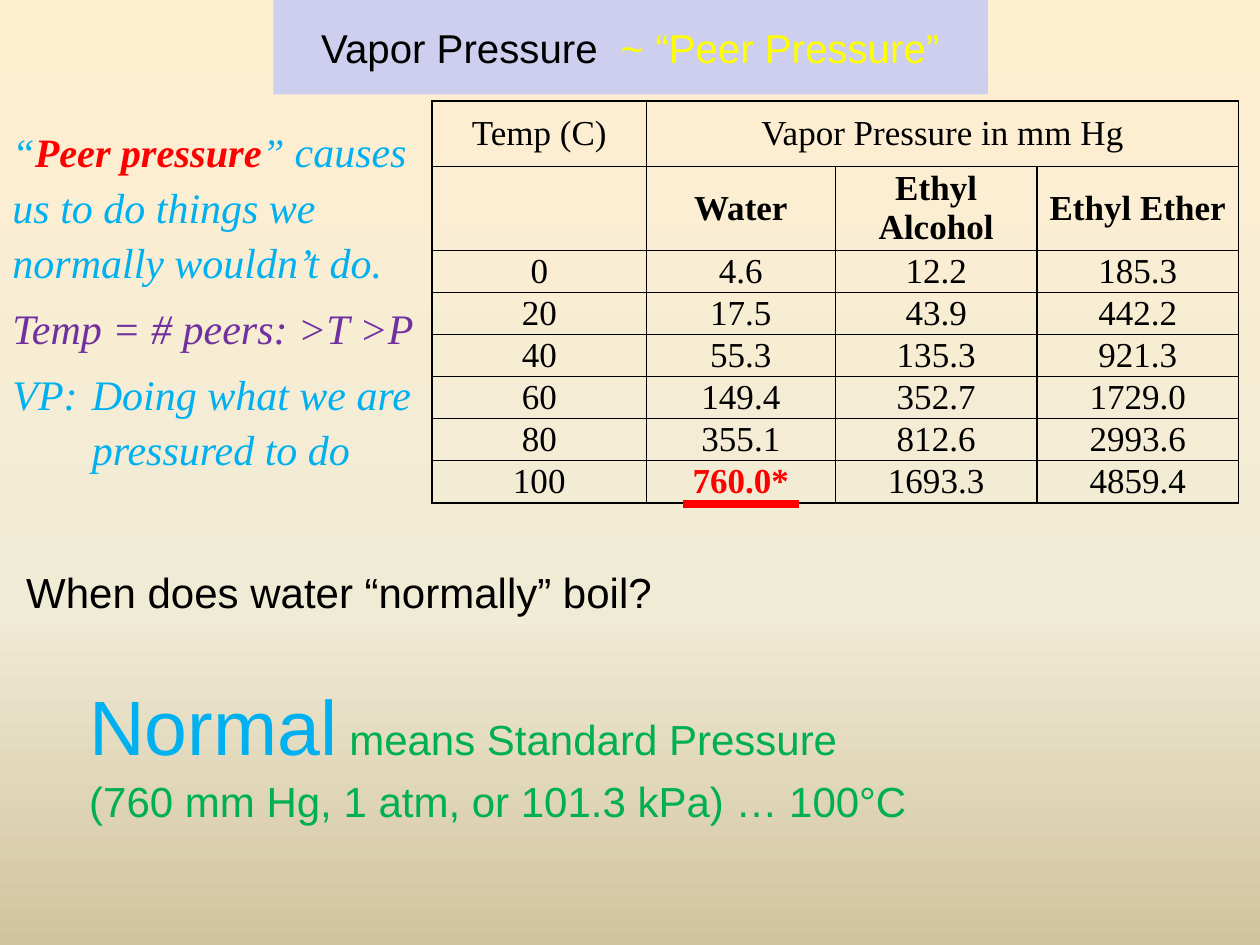
from lxml import etree
from pptx import Presentation
from pptx.dml.color import RGBColor
from pptx.enum.shapes import MSO_CONNECTOR
from pptx.enum.text import MSO_ANCHOR, MSO_AUTO_SIZE, PP_ALIGN
from pptx.oxml.ns import qn
from pptx.util import Inches, Pt

CENTER = PP_ALIGN.CENTER
MIDDLE = MSO_ANCHOR.MIDDLE
NO_AUTOFIT = MSO_AUTO_SIZE.NONE
STRAIGHT = MSO_CONNECTOR.STRAIGHT
TITLE_ONLY = 5
SANS = "Arial"
SERIF = "Times New Roman"
COLORS = {
    "black": "000000", "red": "FF0000", "yellow": "FFFF00", "blue": "00B0F0",
    "green": "00B050", "purple": "7030A0", "lavender": "CECEEF",
    "cream": "FFEFD1", "ivory": "F0EBD5", "sand": "D1C39F",
}


def add_run(paragraph, text, size, color, font=SANS, bold=False, italic=False):
    run = paragraph.add_run()
    run.text = text
    run.font.size = Pt(size)
    run.font.name = font
    run.font.bold = bold
    run.font.italic = italic
    run.font.color.rgb = RGBColor.from_string(COLORS[color])


def add_solid_fill(parent, color):
    fill = etree.SubElement(parent, qn("a:solidFill"))
    etree.SubElement(fill, qn("a:srgbClr"), val=COLORS[color])


presentation = Presentation()
presentation.slide_width = Inches(10)
presentation.slide_height = Inches(7.5)
slide = presentation.slides.add_slide(presentation.slide_layouts[TITLE_ONLY])

background = slide.background.fill
background.gradient()
background.gradient_angle = 270
stops = slide.element.find(".//" + qn("a:gsLst"))
for stop in list(stops):
    stops.remove(stop)
for percent, color in [(0, "cream"), (65, "ivory"), (100, "sand")]:
    stop = etree.SubElement(stops, qn("a:gs"), pos=str(percent * 1000))
    etree.SubElement(stop, qn("a:srgbClr"), val=COLORS[color])

question_box = slide.shapes.add_textbox(Inches(0.11), Inches(4), Inches(9.75), Inches(2.46))
question_frame = question_box.text_frame
question_frame.word_wrap = True
question_frame.margin_top = Inches(0.46)
question_lines = [
    (0, 0, [("When does water “normally” boil?", 24, "black")]),
    (0.5, 29.5, [("Normal", 44, "blue"), (" means Standard Pressure", 24, "green")]),
    (0.5, 0, [("(760 mm Hg, 1 atm, or 101.3 kPa) … 100°C", 24, "green")]),
]
for index, (indent, space_before, runs) in enumerate(question_lines):
    paragraph = question_frame.add_paragraph() if index else question_frame.paragraphs[0]
    paragraph.line_spacing = 1.1
    paragraph.space_before = Pt(space_before)
    paragraph._p.get_or_add_pPr().set("marL", str(Inches(indent)))
    for text, size, color in runs:
        add_run(paragraph, text, size, color)

title = slide.shapes.title
title.left, title.top = Inches(2.17), Inches(0)
title.width, title.height = Inches(5.67), Inches(0.75)
title.fill.solid()
title.fill.fore_color.rgb = RGBColor.from_string(COLORS["lavender"])
title.text_frame.auto_size = NO_AUTOFIT
title.text_frame.vertical_anchor = MIDDLE
title_paragraph = title.text_frame.paragraphs[0]
title_paragraph.alignment = CENTER
add_run(title_paragraph, "Vapor Pressure  ", 23, "black")
add_run(title_paragraph, "~ “Peer Pressure”", 23, "yellow")

rows = [
    ["Temp (C)", "Vapor Pressure in mm Hg", "", ""],
    ["", "Water", "Ethyl Alcohol", "Ethyl Ether"],
    ["0", "4.6", "12.2", "185.3"],
    ["20", "17.5", "43.9", "442.2"],
    ["40", "55.3", "135.3", "921.3"],
    ["60", "149.4", "352.7", "1729.0"],
    ["80", "355.1", "812.6", "2993.6"],
    ["100", "760.0*", "1693.3", "4859.4"],
]
column_widths = [1.7, 1.5, 1.6, 1.6]
row_heights = [0.52, 0.62] + [0.31] * 6
table = slide.shapes.add_table(
    len(rows), len(column_widths), Inches(3.43), Inches(0.8),
    Inches(sum(column_widths)), Inches(sum(row_heights)),
).table
table.first_row = False
table.horz_banding = False
for column, width in zip(table.columns, column_widths):
    column.width = Inches(width)
for row, height in zip(table.rows, row_heights):
    row.height = Inches(height)
table.cell(0, 1).merge(table.cell(0, 3))

for row_index, values in enumerate(rows):
    for column_index, value in enumerate(values):
        cell = table.cell(row_index, column_index)
        cell.vertical_anchor = MIDDLE
        cell.margin_left = cell.margin_right = Inches(0.07)
        cell.margin_top = cell.margin_bottom = Inches(0)
        properties = cell._tc.get_or_add_tcPr()
        for side in ["lnL", "lnR", "lnT", "lnB"]:
            border = etree.SubElement(properties, qn("a:" + side), w=str(Pt(1)))
            add_solid_fill(border, "black")
        cell.fill.background()
        if value:
            boiling = value == "760.0*"
            paragraph = cell.text_frame.paragraphs[0]
            paragraph.alignment = CENTER
            add_run(paragraph, value, 20, "red" if boiling else "black", SERIF,
                    bold=boiling or row_index == 1)

analogy_box = slide.shapes.add_textbox(Inches(0), Inches(0.91), Inches(3.42), Inches(2.69))
analogy_frame = analogy_box.text_frame
analogy_frame.word_wrap = True
analogy_lines = [
    [("“", 23, "blue", False), ("Peer pressure", 23, "red", True), ("” ", 23, "blue", False),
     ("causes us to do things we normally wouldn’t do.", 24, "blue", False)],
    [("Temp = # peers: >T >P", 24, "purple", False)],
    [("VP:\tDoing what we are pressured to do", 24, "blue", False)],
]
for index, runs in enumerate(analogy_lines):
    paragraph = analogy_frame.add_paragraph() if index else analogy_frame.paragraphs[0]
    paragraph.line_spacing = 1.1
    paragraph.space_before = Pt(6 if index else 0)
    for text, size, color, bold in runs:
        add_run(paragraph, text, size, color, SERIF, bold, italic=True)
hanging = analogy_frame.paragraphs[-1]._p.get_or_add_pPr()
hanging.set("marL", str(Inches(0.63)))
hanging.set("indent", str(-Inches(0.63)))

underline = slide.shapes.add_connector(STRAIGHT, Inches(5.42), Inches(4), Inches(6.34), Inches(4))
underline.line.color.rgb = RGBColor.from_string(COLORS["red"])
underline.line.width = Pt(4.5)
etree.SubElement(underline._element.spPr, qn("a:effectLst"))

presentation.save("out.pptx")
